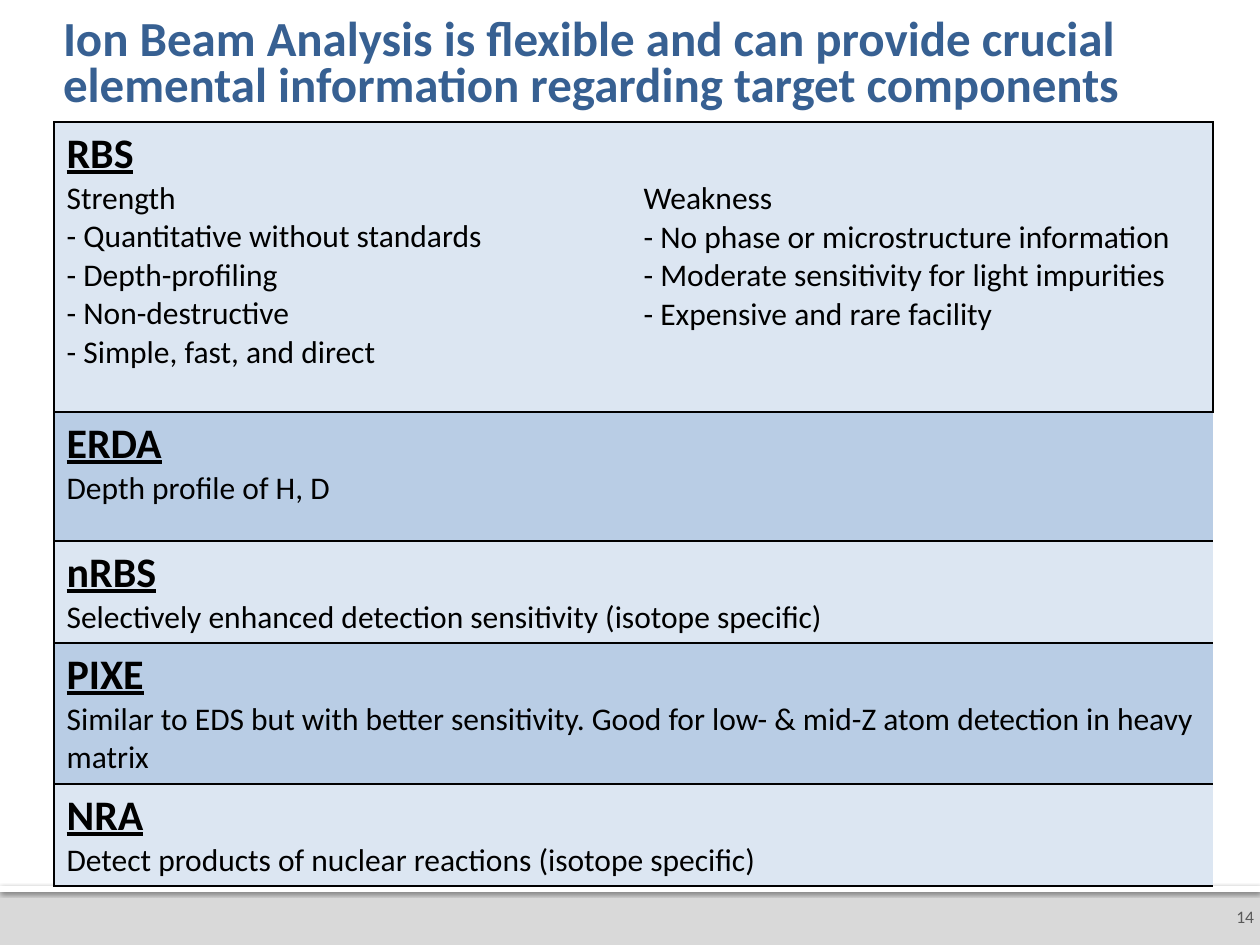
from dataclasses import dataclass

from lxml.etree import SubElement
from pptx import Presentation
from pptx.dml.color import RGBColor
from pptx.enum.shapes import MSO_SHAPE
from pptx.enum.text import MSO_ANCHOR, MSO_AUTO_SIZE, PP_ALIGN
from pptx.oxml.ns import qn
from pptx.shapes.autoshape import Shape
from pptx.slide import Slide
from pptx.table import _Cell
from pptx.text.text import TextFrame, _Paragraph
from pptx.util import Emu, Pt

FONT = "Calibri"
LIGHT, DARK = "DCE6F2", "B9CDE5"
COLS = (577, 582)


@dataclass
class Method:
    name: str
    lines: list[str]
    height: int


METHODS = [
    Method("RBS", ["Strength", "- Quantitative without standards", "- Depth-profiling",
                   "- Non-destructive", "- Simple, fast, and direct"], 290),
    Method("ERDA", ["Depth profile of H, D"], 129),
    Method("nRBS", ["Selectively enhanced detection sensitivity (isotope specific)"], 102),
    Method("PIXE", ["Similar to EDS but with better sensitivity. "
                    "Good for low- & mid-Z atom detection in heavy matrix"], 141),
    Method("NRA", ["Detect products of nuclear reactions (isotope specific)"], 102),
]
WEAKNESSES = ["Weakness", "- No phase or microstructure information",
              "- Moderate sensitivity for light impurities", "- Expensive and rare facility"]


def px(n: int) -> Emu:
    return Emu(round(n * 914400 / 126))


def rgb(color: str) -> RGBColor:
    return RGBColor.from_string(color)


def style(p: _Paragraph, size: int, color: str = "000000", heading: bool = False) -> None:
    for r in p.runs:
        r.font.name, r.font.size = FONT, Pt(size)
        r.font.bold = r.font.underline = heading
        r.font.color.rgb = rgb(color)


def set_insets(tf: TextFrame, left: int, right: int) -> None:
    tf.margin_left, tf.margin_right = px(left), px(right)
    tf.margin_top = tf.margin_bottom = px(6)
    tf.word_wrap = True


def add_bar(s: Slide, top: int, height: int, color: str) -> Shape:
    sp = s.shapes.add_shape(MSO_SHAPE.RECTANGLE, 0, px(top), px(1260), px(height))
    sp.shadow.inherit = False
    sp.fill.solid()
    sp.fill.fore_color.rgb = rgb(color)
    sp.line.fill.background()
    return sp


def add_shadow(sp: Shape) -> None:
    effects = sp._element.spPr.find(qn("a:effectLst"))
    shadow = SubElement(effects, qn("a:outerShdw"), blurRad=str(Pt(2.5)), dist=str(Pt(0.8)),
                        dir="5400000", algn="t", rotWithShape="0")
    clr = SubElement(shadow, qn("a:srgbClr"), val="000000")
    SubElement(clr, qn("a:alpha"), val="60000")


def format_cell(cell: _Cell, color: str, hidden_side: str) -> None:
    tcPr = cell._tc.get_or_add_tcPr()
    for side in "LRTB":
        ln = SubElement(tcPr, qn(f"a:ln{side}"), w=str(Pt(1)))
        if side == hidden_side:
            SubElement(ln, qn("a:noFill"))
        else:
            SubElement(SubElement(ln, qn("a:solidFill")), qn("a:srgbClr"), val="000000")
    cell.fill.solid()
    cell.fill.fore_color.rgb = rgb(color)


def write_cell(cell: _Cell, lines: list[str], heading: bool) -> None:
    cell.text_frame.text = "\n".join(lines)
    for i, p in enumerate(cell.text_frame.paragraphs):
        is_heading = heading and i == 0
        style(p, 24 if is_heading else 18, heading=is_heading)


def add_methods(s: Slide, left: int, top: int) -> None:
    height = sum(m.height for m in METHODS)
    table = s.shapes.add_table(len(METHODS), len(COLS), px(left), px(top),
                               px(sum(COLS)), px(height)).table
    table.first_row = table.horz_banding = False
    for col, width in zip(table.columns, COLS):
        col.width = px(width)
    for i, m in enumerate(METHODS):
        table.rows[i].height = px(m.height)
        first, second = table.cell(i, 0), table.cell(i, 1)
        for cell, hidden_side in ((first, "R"), (second, "L")):
            format_cell(cell, DARK if i % 2 else LIGHT, hidden_side)
        if i:
            first.merge(second)
        write_cell(first, [m.name, *m.lines], heading=True)
    weakness = table.cell(0, 1)
    weakness.margin_top = px(58)
    write_cell(weakness, WEAKNESSES, heading=False)


def add_title(s: Slide, text: str) -> None:
    sp = s.shapes.title
    sp.left, sp.top, sp.width, sp.height = px(63), px(15), px(1134), px(140)
    tf = sp.text_frame
    tf.text = text
    set_insets(tf, 0, 6)
    tf.auto_size = MSO_AUTO_SIZE.NONE
    tf.vertical_anchor = MSO_ANCHOR.TOP
    p = tf.paragraphs[0]
    p.alignment, p.line_spacing = PP_ALIGN.LEFT, Pt(26)
    style(p, 28, "376092")
    p.runs[0].font.bold = True


def add_page_number(s: Slide, text: str) -> None:
    tf = s.shapes.add_textbox(px(1216), px(885), px(44), px(63)).text_frame
    tf.text = text
    set_insets(tf, 13, 6)
    tf.vertical_anchor = MSO_ANCHOR.MIDDLE
    p = tf.paragraphs[0]
    p.alignment = PP_ALIGN.RIGHT
    style(p, 10, "595959")


def main() -> None:
    prs = Presentation()
    prs.slide_width, prs.slide_height = px(1260), px(945)
    s = prs.slides.add_slide(prs.slide_layouts[5])
    add_bar(s, 888, 57, "D9D9D9")
    add_shadow(add_bar(s, 886, 6, "FFFFFF"))
    add_page_number(s, "14")
    add_title(s, "Ion Beam Analysis is flexible and can provide crucial "
                 "elemental information regarding target components")
    add_methods(s, 54, 122)
    prs.save("out.pptx")


if __name__ == "__main__":
    main()
